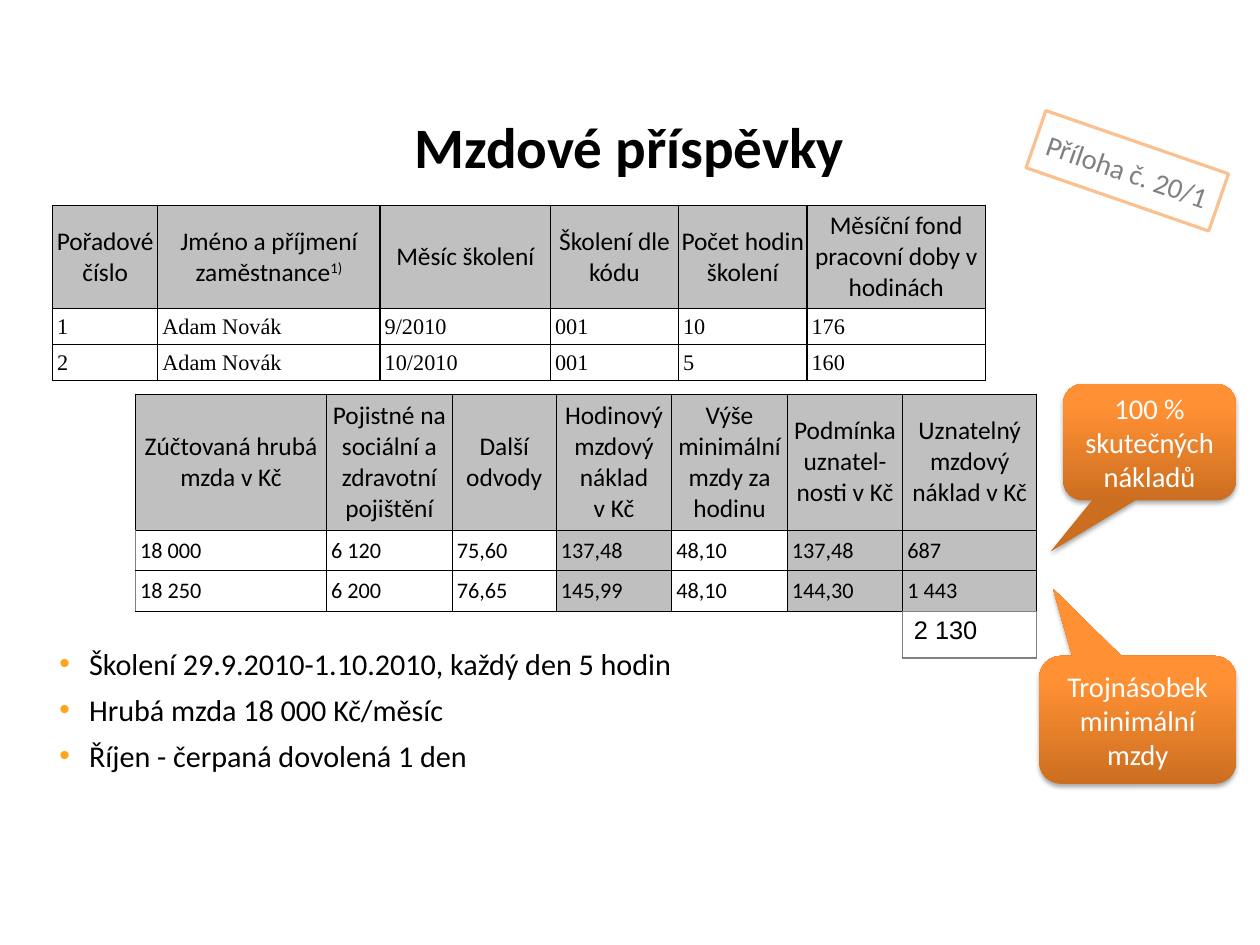
import pptx
import pptx.dml.color
import pptx.enum.shapes
import pptx.enum.text
import pptx.oxml
import pptx.oxml.ns
import pptx.util

COLORS = {
    "black": "000000", "white": "FFFFFF", "gray": "808080",
    "header": "C0C0C0", "computed": "BFBFBF", "peach": "FAC090",
    "bullet": "FFA41D", "orange": "FF9034", "rust": "CC6E20",
}
NS = pptx.oxml.ns.nsdecls("a")
PP = pptx.enum.text.PP_ALIGN
ANCHOR = pptx.enum.text.MSO_ANCHOR
SHAPE = pptx.enum.shapes.MSO_SHAPE


class WageSlide:
    """Draws elements on one slide, with lengths in percent of its size."""

    def __init__(self, prs):
        self.width, self.height = prs.slide_width, prs.slide_height
        self.slide = prs.slides.add_slide(prs.slide_layouts[6])
        self.font = "Calibri"

    def x(self, share):
        return round(self.width * share / 100)

    def y(self, share):
        return round(self.height * share / 100)

    def box(self, left, top, width, height):
        return self.x(left), self.y(top), self.x(width), self.y(height)

    def rgb(self, name):
        return pptx.dml.color.RGBColor.from_string(COLORS[name])

    def style(self, p, size, color="black", align=PP.CENTER, bold=False, font=None):
        p.alignment = align
        for r in p.runs:
            r.font.name = font or self.font
            r.font.size = pptx.util.Pt(size)
            r.font.bold = bold
            r.font.color.rgb = self.rgb(color)

    def title(self, text, place):
        tf = self.slide.shapes.add_textbox(*self.box(*place)).text_frame
        tf.word_wrap = True
        tf.text = text
        self.style(tf.paragraphs[0], 36, bold=True)

    def bullets(self, items, place):
        tf = self.slide.shapes.add_textbox(*self.box(*place)).text_frame
        tf.word_wrap = True
        tf.margin_left = tf.margin_right = pptx.util.Inches(0.11)
        tf.margin_top = tf.margin_bottom = pptx.util.Inches(0.06)
        tf.text = "\n".join(items)
        for p in tf.paragraphs:
            pPr = p._p.get_or_add_pPr()
            pPr.set("marL", str(pptx.util.Inches(0.67)))
            pPr.set("indent", str(pptx.util.Inches(-0.26)))
            for xml in (f'<a:buClr {NS}><a:srgbClr val="{COLORS["bullet"]}"/></a:buClr>',
                        f'<a:buFont {NS} typeface="Arial"/>',
                        f'<a:buChar {NS} char="•"/>'):
                pPr.append(pptx.oxml.parse_xml(xml))
            p.space_after = pptx.util.Pt(6)
            self.style(p, 19, align=PP.LEFT)

    def shape(self, kind, text, place, color):
        sp = self.slide.shapes.add_shape(kind, *self.box(*place))
        sp.shadow.inherit = False
        tf = sp.text_frame
        tf.word_wrap = True
        tf.vertical_anchor = ANCHOR.MIDDLE
        tf.text = text
        self.style(tf.paragraphs[0], 18, color)
        return sp

    def tag(self, text, place, angle):
        sp = self.shape(SHAPE.RECTANGLE, text, place, "gray")
        sp.rotation = angle
        sp.text_frame.word_wrap = False
        sp.fill.solid()
        sp.fill.fore_color.rgb = self.rgb("white")
        sp.line.color.rgb = self.rgb("peach")
        sp.line.width = pptx.util.Pt(2)

    def callout(self, text, place, tip):
        sp = self.shape(SHAPE.ROUNDED_RECTANGULAR_CALLOUT, text, place, "white")
        sp.adjustments[0], sp.adjustments[1] = tip
        sp.line.fill.background()
        sp.fill.gradient()
        sp.fill.gradient_angle = 90
        for stop, color, position in zip(sp.fill.gradient_stops, ("rust", "orange"), (0, 0.8)):
            stop.color.rgb = self.rgb(color)
            stop.position = position
        effects = sp._element.spPr.find(pptx.oxml.ns.qn("a:effectLst"))
        effects.append(pptx.oxml.parse_xml(
            f'<a:outerShdw {NS} blurRad="{pptx.util.Pt(3.1)}" dist="{pptx.util.Pt(1.8)}" '
            f'dir="5400000" rotWithShape="0"><a:srgbClr val="{COLORS["black"]}">'
            '<a:alpha val="35000"/></a:srgbClr></a:outerShdw>'))

    def grid(self, left, top, cols, rows):
        frame = self.slide.shapes.add_table(
            len(rows), len(cols), *self.box(left, top, sum(cols), sum(rows)))
        table = frame.table
        table.first_row = table.horz_banding = False
        for column, width in zip(table.columns, cols):
            column.width = self.x(width)
        for row, height in zip(table.rows, rows):
            row.height = self.y(height)
        return table

    def borders(self, cell, color="black", left=None, top=1, bottom=1):
        tcPr = cell._tc.get_or_add_tcPr()
        sides = (("L", left or color, 1), ("R", color, 1),
                 ("T", color, top), ("B", color, bottom))
        for side, shade, width in sides:
            tcPr.append(pptx.oxml.parse_xml(
                f'<a:ln{side} {NS} w="{pptx.util.Pt(width)}"><a:solidFill>'
                f'<a:srgbClr val="{COLORS[shade]}"/></a:solidFill></a:ln{side}>'))

    def paint(self, cell, color):
        if color:
            cell.fill.solid()
            cell.fill.fore_color.rgb = self.rgb(color)
        else:
            cell.fill.background()

    def table(self, place, cols, rows, data, font=None, fills=None, edge="black"):
        table = self.grid(*place, cols, rows)
        fills = fills or ["white"] * len(cols)
        for i, values in enumerate(data):
            for j, value in enumerate(values):
                cell = table.cell(i, j)
                cell.margin_left = cell.margin_right = 0
                cell.margin_top = cell.margin_bottom = 0
                cell.vertical_anchor = ANCHOR.MIDDLE
                cell.text = value
                p = cell.text_frame.paragraphs[0]
                if i == 0:
                    self.borders(cell)
                    self.paint(cell, "header")
                    self.style(p, 16)
                else:
                    cell.margin_left = pptx.util.Inches(0.04)
                    self.borders(cell, left=edge if j == 0 else None,
                                 top=1 if i == 1 else 0.5, bottom=0.5)
                    self.paint(cell, fills[j])
                    self.style(p, 14, align=PP.LEFT, font=font)
        return table

    def superscript(self, cell, text):
        p = cell.text_frame.paragraphs[0]
        r = p.add_run()
        r.text = text
        self.style(p, 16)
        r._r.get_or_add_rPr().set("baseline", "30000")

    def total(self, text, place, width, height):
        cell = self.grid(*place, [width], [height]).cell(0, 0)
        cell.text = text
        self.borders(cell, "gray")
        self.paint(cell, None)
        self.style(cell.text_frame.paragraphs[0], 16, align=PP.LEFT, font="Arial")


def main():
    prs = pptx.Presentation()
    prs.slide_width = pptx.util.Cm(28)
    prs.slide_height = pptx.util.Cm(21)
    s = WageSlide(prs)
    s.title("Mzdové příspěvky", (6.8, 11.2, 86.3, 12.1))
    s.tag("Příloha č. 20/1", (81.8, 14.87, 15.34, 6.41), 19.1)

    hours = s.table(
        (4.17, 21.75), [8.35, 17.65, 13.52, 10.16, 10.2, 14.16], [10.9, 3.81, 3.81],
        [["Pořadové číslo", "Jméno a příjmení zaměstnance", "Měsíc školení",
          "Školení dle kódu", "Počet hodin školení", "Měsíční fond pracovní doby v hodinách"],
         ["1", "Adam Novák", "9/2010", "001", "10", "176"],
         ["2", "Adam Novák", "10/2010", "001", "5", "160"]],
        font="Times New Roman")
    s.superscript(hours.cell(0, 1), "1)")

    s.table(
        (10.76, 41.72), [15.15, 9.98, 8.26, 9.17, 9.17, 9.17, 10.62], [14.39, 4.29, 4.29],
        [["Zúčtovaná hrubá mzda v Kč", "Pojistné na sociální a zdravotní pojištění",
          "Další odvody", "Hodinový mzdový náklad\vv Kč", "Výše minimální mzdy za hodinu",
          "Podmínka uznatel-\vnosti v Kč", "Uznatelný mzdový náklad v Kč"],
         ["18 000", "6 120", "75,60", "137,48", "48,10", "137,48", "687"],
         ["18 250", "6 200", "76,65", "145,99", "48,10", "144,30", "1 443"]],
        fills=["white", "white", "white", "computed", None, "computed", "computed"],
        edge="gray")

    s.bullets(["Školení 29.9.2010-1.10.2010, každý den 5 hodin",
               "Hrubá mzda 18 000 Kč/měsíc",
               "Říjen - čerpaná dovolená 1 den"], (0, 67.59, 97.6, 27.57))
    s.callout("100 % skutečných nákladů", (84.39, 40.63, 13.7, 12.33), (-0.574, 0.939))
    s.callout("Trojnásobek minimální mzdy", (82.49, 69.41, 15.61, 13.54), (-0.43, -1.024))
    s.total("2 130", (71.63, 64.69), 10.62, 4.96)
    prs.save("out.pptx")


if __name__ == "__main__":
    main()
